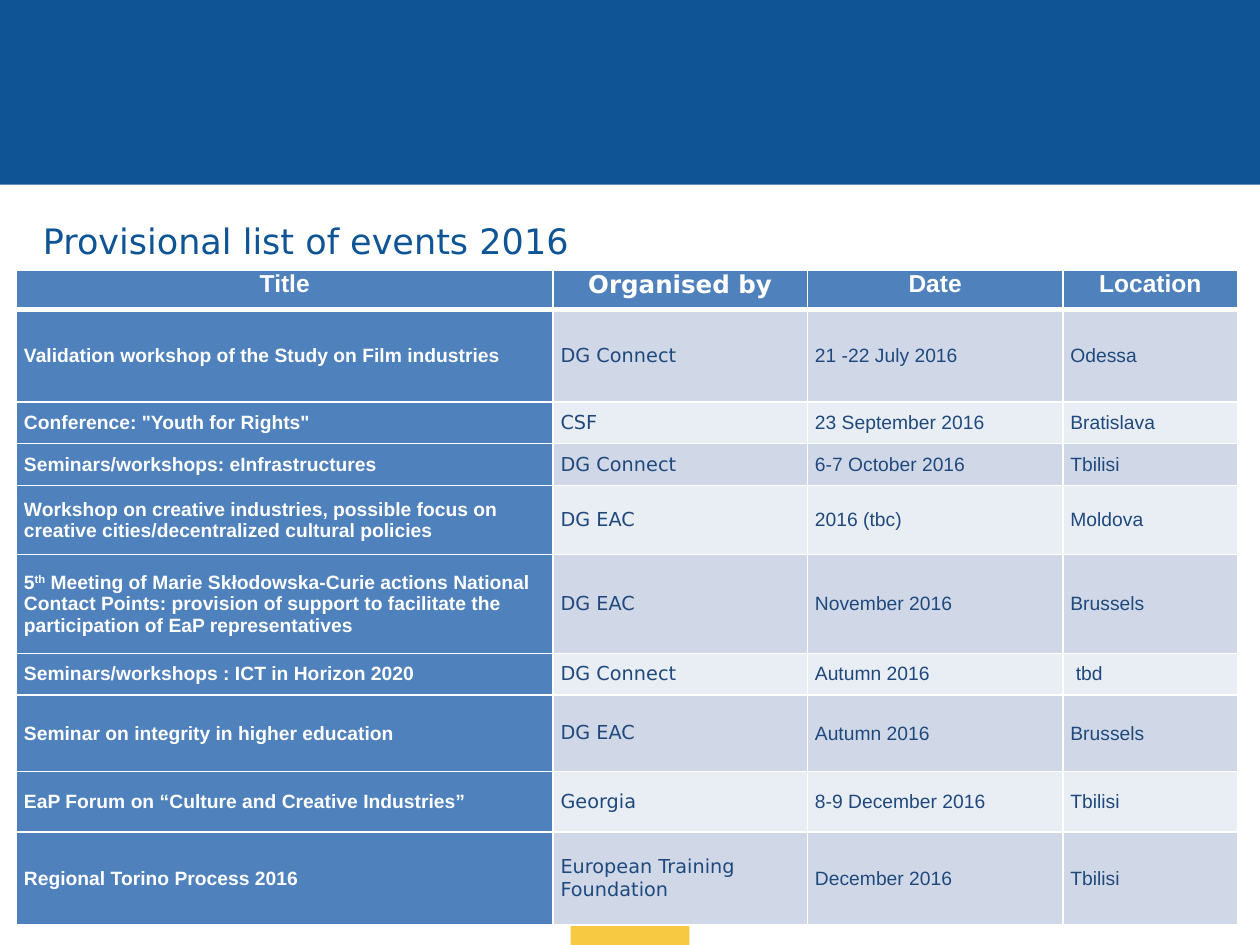
from pptx import Presentation
from pptx.dml.color import RGBColor as RGB
from pptx.enum.shapes import MSO_SHAPE as Shape
from pptx.enum.text import MSO_ANCHOR as Anchor, MSO_AUTO_SIZE as Fit, PP_ALIGN as Align
from pptx.oxml import parse_xml
from pptx.oxml.ns import nsdecls
from pptx.util import Pt

NAVY = RGB(0x0F, 0x54, 0x94)
GOLD = RGB(0xF7, 0xC9, 0x43)
BLUE = RGB(0x4F, 0x81, 0xBD)
INK = RGB(0x1F, 0x49, 0x7D)
WHITE = RGB(0xFF, 0xFF, 0xFF)
BANDS = RGB(0xD0, 0xD8, 0xE8), RGB(0xE9, 0xED, 0xF4)
SANS = "Arial"
WIDE = "DejaVu Sans"

COLS = 306.6, 145.4, 146, 100
ROWS = 22.4, 52.8, 23.8, 23.8, 39.6, 56.4, 23.8, 43.9, 34.4, 53.3
EVENTS = [
    ("Title", "Organised by", "Date", "Location"),
    ("Validation workshop of the Study on Film industries",
     "DG Connect", "21 -22 July 2016", "Odessa"),
    ('Conference: "Youth for Rights"', "CSF", "23 September 2016", "Bratislava"),
    ("Seminars/workshops: eInfrastructures",
     "DG Connect", "6-7 October 2016", "Tbilisi"),
    ("Workshop on creative industries, possible focus on "
     "creative cities/decentralized cultural policies",
     "DG EAC", "2016 (tbc)", "Moldova"),
    ("5^th^ Meeting of Marie Skłodowska-Curie actions National Contact Points: "
     "provision of support to facilitate the participation of EaP representatives",
     "DG EAC", "November 2016", "Brussels"),
    ("Seminars/workshops : ICT in Horizon 2020", "DG Connect", "Autumn 2016", "tbd"),
    ("Seminar on integrity in higher education",
     "DG EAC", "Autumn 2016", "Brussels"),
    ("EaP Forum on “Culture and Creative Industries”",
     "Georgia", "8-9 December 2016", "Tbilisi"),
    ("Regional Torino Process 2016",
     "European Training Foundation", "December 2016", "Tbilisi"),
]


def add_bar(slide, x, y, w, h, color):
    """Draw a plain filled bar."""
    bar = slide.shapes.add_shape(Shape.RECTANGLE, Pt(x), Pt(y), Pt(w), Pt(h))
    bar.shadow.inherit = False
    bar.fill.solid()
    bar.fill.fore_color.rgb = color
    bar.line.fill.background()


def style(run, size, name, color, bold=False):
    """Set the font of a run."""
    font = run.font
    font.size, font.name, font.bold = Pt(size), name, bold
    font.color.rgb = color


def set_title(slide, text):
    """Place and format the title."""
    title = slide.shapes.title
    title.left, title.top, title.width, title.height = Pt(17.3), Pt(121.7), Pt(659.5), Pt(57.6)
    frame = title.text_frame
    frame.text = text
    frame.auto_size = Fit.NONE
    frame.vertical_anchor = Anchor.TOP
    para = frame.paragraphs[0]
    para.alignment = Align.LEFT
    style(para.runs[0], 20, WIDE, NAVY)


def set_edges(cell, top, bottom):
    """Give a cell white borders."""
    props = cell._tc.get_or_add_tcPr()
    for side, width in zip("LRTB", (1, 1, top, bottom)):
        props.append(parse_xml(
            f'<a:ln{side} {nsdecls("a")} w="{Pt(width)}"><a:solidFill>'
            f'<a:srgbClr val="{WHITE}"/></a:solidFill></a:ln{side}>'))


def fill_cell(cell, text, row, col):
    """Write and format one table cell."""
    head = row == 0
    strong = head or col == 0
    set_edges(cell, 3 if row == 1 else 1, 3 if head else 1)
    cell.fill.solid()
    cell.fill.fore_color.rgb = BLUE if strong else BANDS[(row - 1) % 2]
    cell.margin_left = Pt(7.4 if text == "tbd" else 4.3)
    cell.margin_right = Pt(4.3)
    cell.margin_top = cell.margin_bottom = 0
    cell.vertical_anchor = Anchor.TOP if head else Anchor.MIDDLE
    para = cell.text_frame.paragraphs[0]
    para.alignment = Align.CENTER if head else Align.LEFT
    for i, part in enumerate(text.split("^")):
        run = para.add_run()
        run.text = part
        style(run, 14 if head else 11, WIDE if col == 1 else SANS,
              WHITE if strong else INK, strong)
        if i % 2:
            run.font._element.set("baseline", "30000")


def add_events(slide):
    """Build the table of events."""
    table = slide.shapes.add_table(
        len(ROWS), len(COLS), Pt(9.4), Pt(154.6), Pt(sum(COLS)), Pt(sum(ROWS))).table
    for col, width in zip(table.columns, COLS):
        col.width = Pt(width)
    for row, height in zip(table.rows, ROWS):
        row.height = Pt(height)
    for r, event in enumerate(EVENTS):
        for c, text in enumerate(event):
            fill_cell(table.cell(r, c), text, r, c)


def main():
    """Build and save the slide."""
    deck = Presentation()
    deck.slide_width, deck.slide_height = Pt(720), Pt(540)
    slide = deck.slides.add_slide(deck.slide_layouts[5])
    add_bar(slide, 326, 520, 68, 20, GOLD)
    add_bar(slide, 0, 0, 720, 105.6, NAVY)
    set_title(slide, "Provisional list of events 2016")
    add_events(slide)
    deck.save("out.pptx")


if __name__ == "__main__":
    main()
